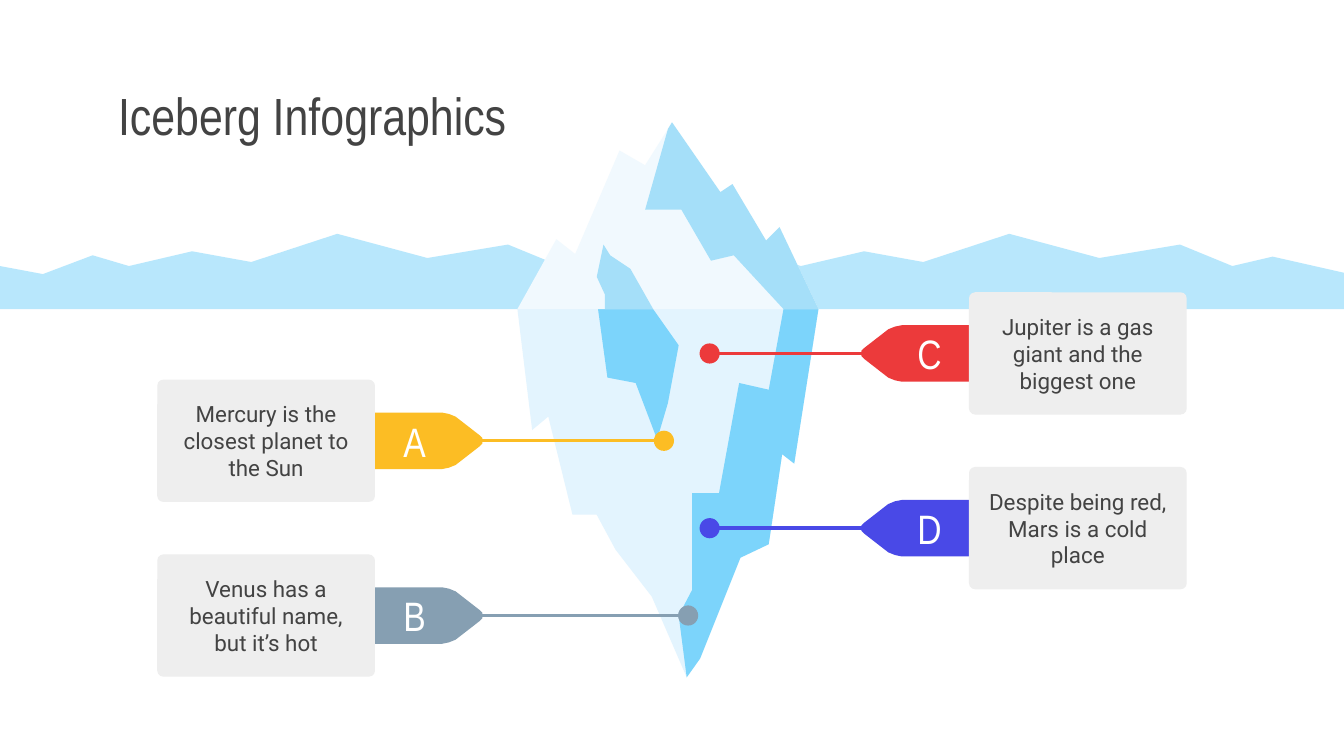
from pptx import Presentation
from pptx.dml.color import RGBColor
from pptx.enum.shapes import MSO_CONNECTOR, MSO_SHAPE
from pptx.enum.text import MSO_ANCHOR, PP_ALIGN
from pptx.oxml.ns import qn
from pptx.util import Inches, Pt
from lxml import etree

LINE = MSO_CONNECTOR.STRAIGHT
ROUND, OVAL = MSO_SHAPE.ROUNDED_RECTANGLE, MSO_SHAPE.OVAL
MIDDLE = MSO_ANCHOR.MIDDLE
LEFT, CENTER = PP_ALIGN.LEFT, PP_ALIGN.CENTER

W = 10
H = W * 9 / 16
INK, WHITE, GREY = "434343", "FFFFFF", "EEEEEE"
HEAD, BODY = "Arial Narrow", "Roboto"
TITLE = "Iceberg Infographics"

HILLS = [
    (2.51, 1.74), (1.87, 1.95), (1.43, 1.87), (0.96, 1.98), (0.69, 1.9),
    (0.32, 2.04), (0, 1.98), (0, 2.3), (10, 2.3), (10, 2.03), (9.47, 1.91),
    (9.17, 1.98), (8.78, 1.82), (8.18, 1.92), (7.51, 1.74), (6.87, 1.95),
    (6.43, 1.87), (5.96, 1.98), (5.69, 1.9), (5.31, 2.04), (4.53, 1.92),
    (4.46, 1.91), (4.17, 1.98), (3.78, 1.82), (3.18, 1.92)]
KEEL = [(5.11, 5.04), (5.21, 4.9), (5.51, 4.15), (5.72, 4.05),
        (5.82, 3.38), (5.91, 3.45), (6.09, 2.3)]
RIDGE = [(6.09, 2.3), (5.8, 1.69), (5.7, 1.79), (5.45, 1.37),
         (5.36, 1.43), (5, 0.91), (4.97, 0.96)]
ICE = [
    ("E3F4FE", [(3.85, 2.3), (3.96, 3.2), (4.08, 3.1), (4.26, 3.83),
                (4.44, 3.83), (4.58, 4.09), (4.85, 4.44)] + KEEL),
    ("7CD4FB", [(5.83, 2.3), (5.72, 2.9), (5.5, 2.85), (5.35, 3.67),
                (5.15, 3.67), (5.15, 4.39), (5.05, 4.58)] + KEEL),
    ("7CD4FB", [(4.45, 2.3), (4.52, 2.81), (4.73, 2.85), (4.89, 3.27),
                (4.97, 3), (5.05, 2.57), (4.86, 2.3)]),
    ("F1F9FE", RIDGE + [(4.8, 1.23), (4.61, 1.12), (4.28, 1.89),
                        (4.14, 1.78), (3.85, 2.3)]),
    ("A5DFF9", RIDGE + [(4.8, 1.56), (5.07, 1.56), (5.29, 1.94),
                        (5.46, 1.9), (5.83, 2.3)]),
    ("A5DFF9", [(4.49, 1.82), (4.44, 2.06), (4.5, 2.19), (4.5, 2.3),
                (4.86, 2.3), (4.69, 2), (4.54, 1.9)])]

NOTES = [
    ("A", "Mercury is the closest planet to the Sun", "FCBD24", 4.94),
    ("B", "Venus has a beautiful name, but it’s hot", "869FB2", 5.12),
    ("C", "Jupiter is a gas giant and the biggest one", "EC3A3B", 5.28),
    ("D", "Despite being red, Mars is a cold place", "4949E7", 5.28)]
SIDES = [(2.79, 1, 3.28), (7.21, -1, 2.63)]
STEP = 1.3
CARD_W, CARD_H = 1.62, 0.91
TAG_W, TAG_H = 0.59, 0.38
DOT = 0.15
EDGE = [(-0.08, 0.21), (0.5, 0.21), (0.55, 0.2), (0.6, 0.18),
        (0.78, 0.04), (0.8, 0.02)]


def paint(shape, color):
    shape.shadow.inherit = False
    shape.fill.solid()
    shape.fill.fore_color.rgb = RGBColor.from_string(color)
    shape.line.fill.background()
    return shape


def outline(points, color):
    spots = [(Inches(x), Inches(y)) for x, y in points]
    pen = slide.shapes.build_freeform(*spots[0])
    pen.add_line_segments(spots[1:], close=True)
    return paint(pen.convert_to_shape(), color)


def preset(kind, *box):
    return slide.shapes.add_shape(kind, *map(Inches, box))


def write(shape, text, font, size, color, align=CENTER):
    frame = shape.text_frame
    frame.word_wrap = True
    frame.vertical_anchor = MIDDLE
    frame.margin_left = frame.margin_right = Inches(0.1)
    frame.margin_top = frame.margin_bottom = Inches(0.1)
    par = frame.paragraphs[0]
    par.text, par.alignment = text, align
    par.font.name, par.font.size = font, Pt(size)
    par.font.color.rgb = RGBColor.from_string(color)


def label(box, *style):
    write(slide.shapes.add_textbox(*map(Inches, box)), *style)


def note(mark, text, color, tip, edge, way, mid):
    rod = slide.shapes.add_connector(
        LINE, *map(Inches, (edge + way * 0.7, mid, tip, mid)))
    rod.line.color.rgb = RGBColor.from_string(color)
    rod.line.width = Pt(1.8)
    etree.SubElement(rod._element.spPr, qn("a:effectLst"))
    paint(preset(OVAL, tip - DOT / 2, mid - DOT / 2, DOT, DOT), color)

    half = EDGE + [(x, -y) for x, y in reversed(EDGE)]
    outline([(edge + way * x, mid + y) for x, y in half], color)
    left = edge - CARD_W if way > 0 else edge
    card = paint(preset(ROUND, left, mid - CARD_H / 2, CARD_W, CARD_H), GREY)
    card.adjustments[0] = 0.05
    write(card, text, BODY, 12, INK)
    left = edge if way > 0 else edge - TAG_W
    label((left, mid - TAG_H / 2, TAG_W, TAG_H), mark, HEAD, 22, WHITE)


prs = Presentation()
prs.slide_width, prs.slide_height = Inches(W), Inches(H)
slide = prs.slides.add_slide(prs.slide_layouts[6])

label((0.78, 0.59, 3.81, 0.53), TITLE, HEAD, 28, INK, LEFT)
hills = outline(HILLS, "7CD4FB")
tint = hills._element.spPr.find(qn("a:solidFill"))[0]
etree.SubElement(tint, qn("a:alpha"), val="54000")
for color, points in ICE:
    outline(points, color)
for i, item in enumerate(NOTES):
    side, row = divmod(i, 2)
    edge, way, top = SIDES[side]
    note(*item, edge, way, top + row * STEP)

prs.save("out.pptx")
